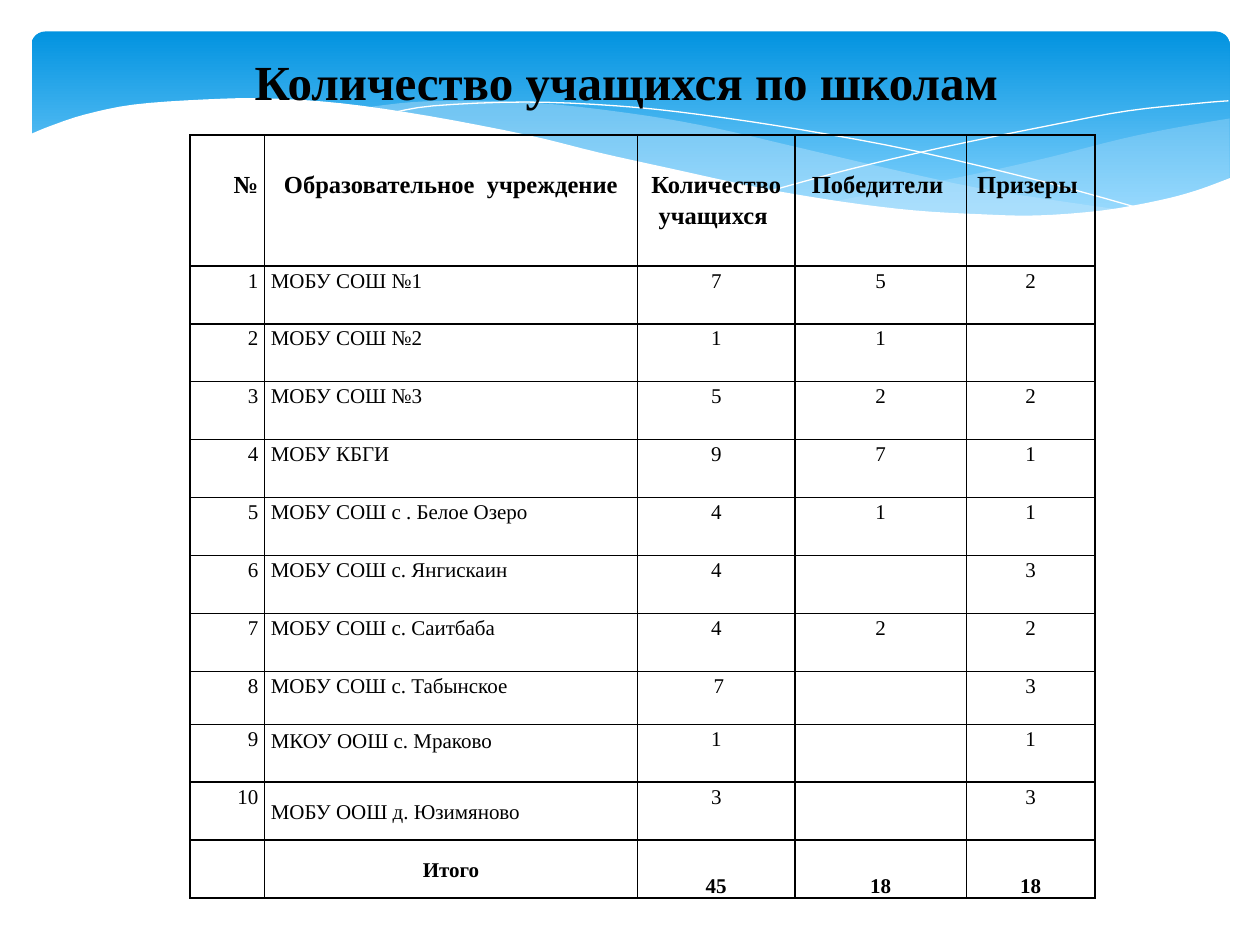
from lxml import etree
from pptx import Presentation
from pptx.dml.color import RGBColor
from pptx.enum.shapes import MSO_SHAPE
from pptx.enum.text import MSO_ANCHOR, PP_ALIGN
from pptx.oxml.ns import qn
from pptx.util import Inches, Pt

LEFT, CENTER, RIGHT = PP_ALIGN.LEFT, PP_ALIGN.CENTER, PP_ALIGN.RIGHT
TOP, MIDDLE, BOTTOM = MSO_ANCHOR.TOP, MSO_ANCHOR.MIDDLE, MSO_ANCHOR.BOTTOM
ROUNDED = MSO_SHAPE.ROUNDED_RECTANGLE
TITLE_ONLY = 5
FONT = "Times New Roman"
BLACK, WHITE, PALE_BLUE = "000000", "FFFFFF", "C6E7FC"

TITLE_BOX = (1.89, 0.29, 6.16, 0.61)
BAND_BOX = (0.25, 0.25, 9.51, 1.56)
TABLE_BOX = (1.51, 1.07, 7.18, 6.06)

# Wave knots, in inches from the corner of the band
RIGHT_SWELL = [
    [(9.51, .69), (9.1, .76), (8.66, .85), (8.07, 1), (7.54, 1.12), (7.04, 1.22), (6.36, 1.35)],
    [(6.36, 1.35), (6.8, 1.4), (7.2, 1.44), (7.67, 1.47), (8.1, 1.47), (8.47, 1.44),
     (8.8, 1.38), (9.1, 1.31), (9.38, 1.22), (9.51, 1.16)],
]
MIDDLE_SWELL = [
    [(8.68, 1.42), (8.12, 1.34), (7.5, 1.24), (6.81, 1.09), (6.04, .91), (5.44, .77),
     (4.89, .67), (4.17, .58), (3.55, .55), (3.03, .56), (2.61, .61)],
    [(2.61, .61), (3.17, .69), (3.79, .81), (4.24, .91), (5.05, 1.1), (5.76, 1.25),
     (6.4, 1.36), (6.97, 1.43), (7.48, 1.47), (7.93, 1.48), (8.32, 1.46), (8.68, 1.42)],
]
FALLING_LINE = [[(2.84, .65), (3.19, .59), (3.91, .56), (4.64, .59), (5.31, .66),
                 (6.11, .78), (7.02, .95), (8.06, 1.2), (8.82, 1.41)]]
RISING_LINE = [[(5.88, 1.26), (6.47, 1.1), (7.23, .92), (8.11, .74), (8.7, .63),
                (9.26, .57), (9.5, .55)]]
WHITE_WAVE = [
    [(-.02, .82), (.15, .75), (.42, .66), (.81, .58), (1.36, .54), (1.86, .53), (2.46, .57),
     (3.15, .67), (3.93, .82), (4.5, .96), (5.04, 1.08), (5.78, 1.24), (6.43, 1.35),
     (7.01, 1.42), (7.53, 1.45), (7.98, 1.46), (8.5, 1.42), (8.95, 1.34), (9.25, 1.26),
     (9.52, 1.16)],
    [(9.52, 1.99), (-.02, 1.99)],
]

COLUMN_WIDTHS = (0.59, 2.96, 1.25, 1.36, 1.02)
ROW_HEIGHTS = [1.04] + [0.46] * 7 + [0.42] + [0.46] * 3
HEADER = ("№", "Образовательное  учреждение", "Количество учащихся ", "Победители ", "Призеры ")
SCHOOLS = [
    ("МОБУ СОШ №1", "7", "5", "2"),
    ("МОБУ СОШ №2", "1", "1", ""),
    ("МОБУ СОШ №3", "5", "2", "2"),
    ("МОБУ КБГИ", "9", "7", "1"),
    ("МОБУ СОШ с . Белое Озеро", "4", "1", "1"),
    ("МОБУ СОШ с. Янгискаин", "4", "", "3"),
    ("МОБУ СОШ с. Саитбаба", "4", "2", "2"),
    ("МОБУ СОШ с. Табынское", " 7", "", "3"),
    ("МКОУ ООШ с. Мраково", "1", "", "1"),
    ("МОБУ ООШ д. Юзимяново", "3", "", "3"),
]
TOTALS = ("", "Итого", "45", "18", "18")


def color(value):
    return RGBColor.from_string(value)


def write(frame, text, size, bold, align):
    frame.text = text
    paragraph = frame.paragraphs[0]
    paragraph.alignment = align
    paragraph.line_spacing = 1.15
    font = paragraph.runs[0].font
    for name, value in {"name": FONT, "size": Pt(size), "bold": bold}.items():
        setattr(font, name, value)
    font.color.rgb = color(BLACK)
    return paragraph


def smooth_points(knots, steps=4):
    """Points on a Catmull-Rom curve through the knots."""
    padded = [knots[0], *knots, knots[-1]]
    points = [knots[0]]
    for a, b, c, d in zip(padded, padded[1:], padded[2:], padded[3:]):
        for step in range(1, steps + 1):
            t = step / steps
            points.append(tuple(
                (2 * q + (r - p) * t + (2 * p - 5 * q + 4 * r - s) * t ** 2
                 + (3 * q - p - 3 * r + s) * t ** 3) / 2
                for p, q, r, s in zip(a, b, c, d)))
    return points


def add_wave(slide, box, curves, fill=None, opacity=100):
    """A filled wave, or a thin white open curve when no fill is given."""
    points = [(Inches(box[0] + x), Inches(box[1] + y))
              for curve in curves for x, y in smooth_points(curve)]
    builder = slide.shapes.build_freeform(*points[0])
    builder.add_line_segments(points[1:], close=fill is not None)
    shape = builder.convert_to_shape()
    shape.shadow.inherit = False
    if fill is None:
        shape.fill.background()
        shape.line.color.rgb = color(WHITE)
        shape.line.width = Pt(0)
        return
    shape.line.fill.background()
    shape.fill.solid()
    shape.fill.fore_color.rgb = color(fill)
    if opacity < 100:
        tone = shape.element.spPr.find(".//" + qn("a:srgbClr"))
        etree.SubElement(tone, qn("a:alpha"), val=str(opacity * 1000))


def add_band(slide, box):
    band = slide.shapes.add_shape(ROUNDED, *map(Inches, box))
    band.adjustments[0] = 0.07
    band.shadow.inherit = False
    band.line.fill.background()
    band.fill.gradient()
    band.fill.gradient_angle = 270
    for stop, (position, tone) in zip(band.fill.gradient_stops, [(0, "0293E0"), (0.9, "83D3FE")]):
        stop.position = position
        stop.color.rgb = color(tone)
    add_wave(slide, box, RIGHT_SWELL, PALE_BLUE, 29)
    add_wave(slide, box, MIDDLE_SWELL, PALE_BLUE, 40)
    add_wave(slide, box, FALLING_LINE)
    add_wave(slide, box, RISING_LINE)
    add_wave(slide, box, WHITE_WAVE, WHITE)


def place_title(slide, box):
    """Format the title and bring it in front of the band."""
    title = slide.shapes.title
    title.left, title.top, title.width, title.height = map(Inches, box)
    paragraph = write(title.text_frame, "Количество учащихся по школам", 28, True, CENTER)
    paragraph.space_after = Pt(10)
    title.text_frame.word_wrap = False
    title.text_frame.vertical_anchor = TOP
    title.element.getparent().append(title.element)


def set_borders(cell):
    properties = cell._tc.get_or_add_tcPr()
    for side in ("lnL", "lnR", "lnT", "lnB"):
        border = etree.SubElement(properties, qn("a:" + side), w=str(Pt(1)))
        fill = etree.SubElement(border, qn("a:solidFill"))
        etree.SubElement(fill, qn("a:srgbClr"), val=BLACK)


def fill_cell(cell, text, size=12, bold=False, align=CENTER, anchor=TOP, margin_top=0):
    set_borders(cell)
    cell.fill.background()
    margins = {"margin_left": 0.05, "margin_right": 0.05,
               "margin_top": margin_top, "margin_bottom": 0}
    for name, value in margins.items():
        setattr(cell, name, Inches(value))
    cell.vertical_anchor = anchor
    if text:
        write(cell.text_frame, text, size, bold, align)


def add_school_table(slide, box):
    rows = [HEADER, *((str(number), *school) for number, school in enumerate(SCHOOLS, 1)), TOTALS]
    frame = slide.shapes.add_table(len(rows), len(HEADER), *map(Inches, box))
    table = frame.table
    table.first_row = table.horz_banding = False
    for column, width in zip(table.columns, COLUMN_WIDTHS):
        column.width = Inches(width)
    last = len(rows) - 1
    for index, (row, height) in enumerate(zip(rows, ROW_HEIGHTS)):
        table.rows[index].height = Inches(height)
        for column, text in enumerate(row):
            style = {"align": RIGHT if column == 0 else CENTER}
            if index == 0:
                style.update(size=14, bold=True, margin_top=0.26)
            elif index == last:
                style.update(bold=True, anchor=MIDDLE if column == 1 else BOTTOM)
            elif column == 1:
                style.update(align=LEFT, anchor=MIDDLE if index == last - 1 else TOP,
                             margin_top=0.02 if index == last - 2 else 0)
            fill_cell(table.cell(index, column), text, **style)


def main():
    presentation = Presentation()
    presentation.slide_width, presentation.slide_height = Inches(10), Inches(7.5)
    slide = presentation.slides.add_slide(presentation.slide_layouts[TITLE_ONLY])
    add_band(slide, BAND_BOX)
    place_title(slide, TITLE_BOX)
    add_school_table(slide, TABLE_BOX)
    presentation.save("out.pptx")


if __name__ == "__main__":
    main()
